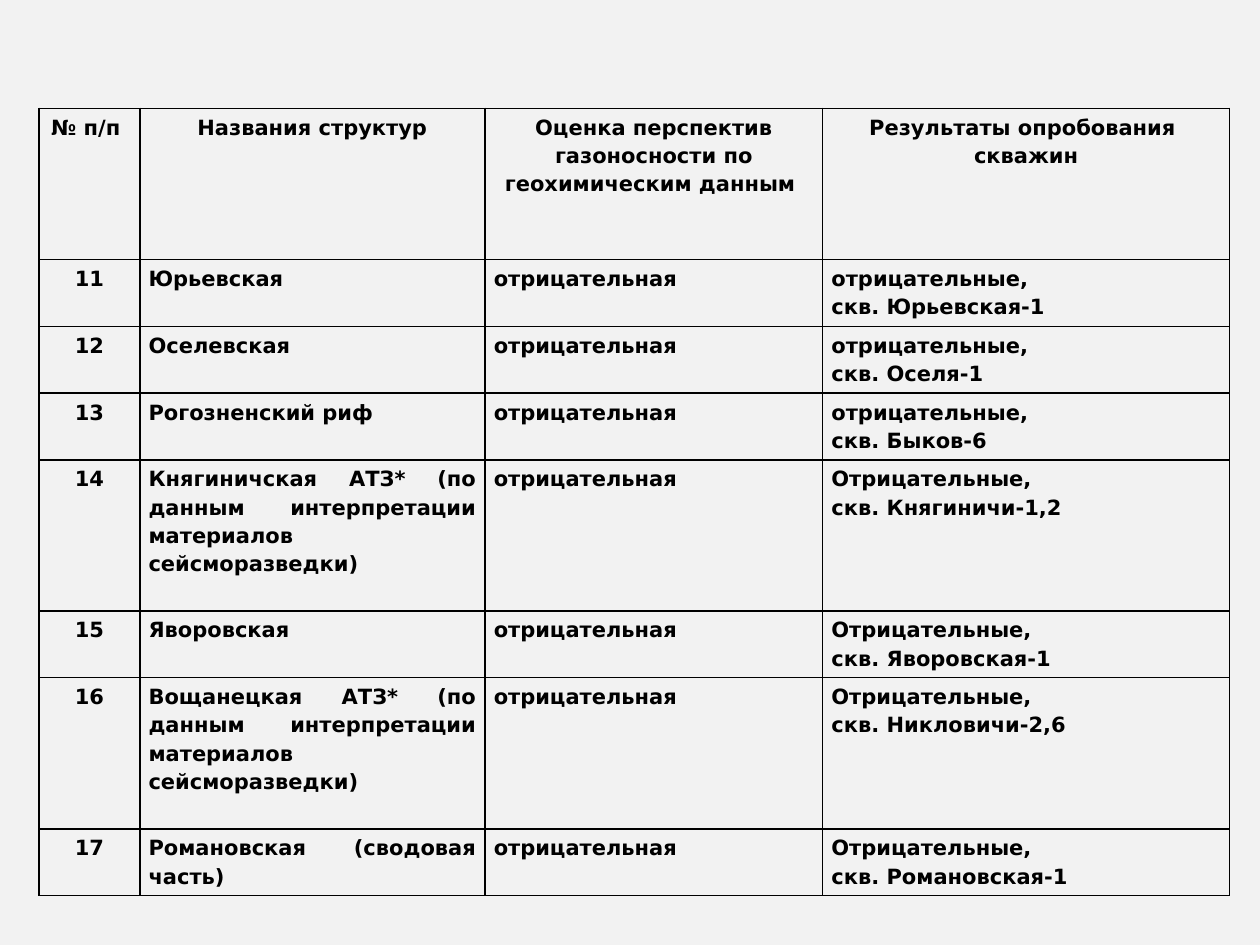
from lxml import etree
from pptx import Presentation
from pptx.dml.color import RGBColor
from pptx.enum.text import PP_ALIGN
from pptx.oxml.ns import qn
from pptx.util import Inches, Pt

CENTER, JUSTIFY = PP_ALIGN.CENTER, PP_ALIGN.JUSTIFY
COLORS = {"background": "F2F2F2", "text": "000000", "border": "000000"}
FONT = "DejaVu Sans"
COLUMN_WIDTHS = [0.8, 2.74, 2.68, 3.23]
SHORT_ROW, TALL_ROW = 0.53, 1.2

HEADERS = [
    "№ п/п ",
    "Названия структур",
    "Оценка перспектив газоносности по геохимическим данным ",
    "Результаты опробования \nскважин",
]
SEISMIC = "АТЗ* (по данным интерпретации материалов сейсморазведки)"
STRUCTURES = [
    ("Юрьевская", "отрицательные", "Юрьевская-1", SHORT_ROW),
    ("Оселевская", "отрицательные", "Оселя-1", SHORT_ROW),
    ("Рогозненский риф", "отрицательные", "Быков-6", SHORT_ROW),
    (f"Княгиничская {SEISMIC}", "Отрицательные", "Княгиничи-1,2", TALL_ROW),
    ("Яворовская", "Отрицательные", "Яворовская-1", SHORT_ROW),
    (f"Вощанецкая {SEISMIC}", "Отрицательные", "Никловичи-2,6", TALL_ROW),
    ("Романовская (сводовая часть)", "Отрицательные", "Романовская-1", SHORT_ROW),
]
FIRST_NUMBER = 11


def set_borders(cell):
    tcPr = cell._tc.get_or_add_tcPr()
    for side in ("a:lnL", "a:lnR", "a:lnT", "a:lnB"):
        ln = etree.SubElement(tcPr, qn(side), w=str(Pt(1)))
        fill = etree.SubElement(ln, qn("a:solidFill"))
        etree.SubElement(fill, qn("a:srgbClr"), val=COLORS["border"])


def fill_cell(cell, text, align):
    set_borders(cell)
    cell.fill.background()
    cell.margin_left = cell.margin_right = Inches(0.07)
    cell.margin_top = cell.margin_bottom = Inches(0.03)
    cell.text_frame.text = text
    for p in cell.text_frame.paragraphs:
        p.alignment = align
        p.line_spacing = 1.15
        for r in p.runs:
            r.font.name = FONT
            r.font.size = Pt(12)
            r.font.bold = True
            r.font.color.rgb = RGBColor.from_string(COLORS["text"])


def add_structures_table(s, left, top, width, height):
    rows = [HEADERS]
    heights = [TALL_ROW]
    for number, (name, result, well, row_height) in enumerate(STRUCTURES, FIRST_NUMBER):
        rows.append([str(number), name, "отрицательная", f"{result}, \nскв. {well}"])
        heights.append(row_height)

    table = s.shapes.add_table(
        len(rows), len(HEADERS), Inches(left), Inches(top), Inches(width), Inches(height)
    ).table
    table.first_row = table.horz_banding = False
    for column, share in zip(table.columns, COLUMN_WIDTHS):
        column.width = Inches(width * share / sum(COLUMN_WIDTHS))
    for row, share in zip(table.rows, heights):
        row.height = Inches(height * share / sum(heights))
    for i, texts in enumerate(rows):
        for j, text in enumerate(texts):
            fill_cell(table.cell(i, j), text, CENTER if i == 0 or j == 0 else JUSTIFY)


def main():
    prs = Presentation()
    prs.slide_width, prs.slide_height = Inches(10), Inches(7.5)
    s = prs.slides.add_slide(prs.slide_layouts[6])
    s.background.fill.solid()
    s.background.fill.fore_color.rgb = RGBColor.from_string(COLORS["background"])
    add_structures_table(s, 0.31, 0.86, 9.45, 6.25)
    prs.save("out.pptx")


if __name__ == "__main__":
    main()
